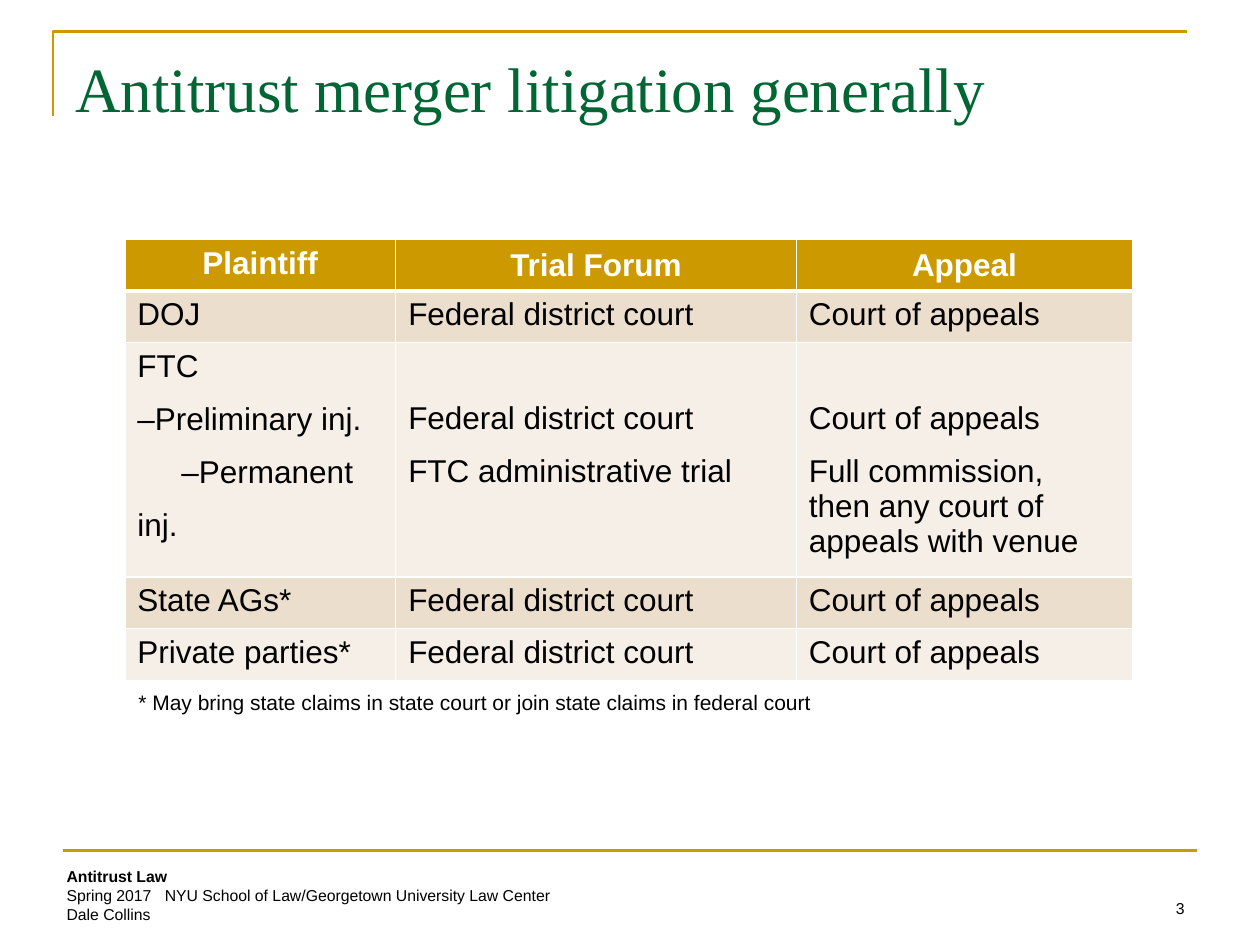
"""Build the slide on antitrust merger litigation forums."""
from lxml import etree
from pptx import Presentation
from pptx.dml.color import RGBColor
from pptx.enum.shapes import MSO_CONNECTOR
from pptx.enum.text import MSO_ANCHOR, PP_ALIGN
from pptx.oxml.ns import qn
from pptx.util import Inches, Pt

GOLD = RGBColor(0xCC, 0x99, 0x00)
GREEN = RGBColor(0x00, 0x66, 0x33)
BLACK = RGBColor(0x00, 0x00, 0x00)
WHITE = RGBColor(0xFF, 0xFF, 0xFF)
TAN = RGBColor(0xEC, 0xDE, 0xCC)
CREAM = RGBColor(0xF6, 0xEF, 0xE7)
STRAIGHT = MSO_CONNECTOR.STRAIGHT
TOP, MIDDLE, BOTTOM = MSO_ANCHOR.TOP, MSO_ANCHOR.MIDDLE, MSO_ANCHOR.BOTTOM
LEFT, CENTER, RIGHT = PP_ALIGN.LEFT, PP_ALIGN.CENTER, PP_ALIGN.RIGHT


def write(frame, lines, size, color=BLACK, font="Arial", bold=False, align=LEFT):
    frame.word_wrap = True
    for index, line in enumerate(lines):
        paragraph = frame.paragraphs[0] if index == 0 else frame.add_paragraph()
        paragraph.alignment = align
        run = paragraph.add_run()
        run.text = line
        run.font.size = Pt(size)
        run.font.name = font
        run.font.bold = bold
        run.font.color.rgb = color


def add_text(box, lines, size, anchor=TOP, **style):
    frame = slide.shapes.add_textbox(*map(Inches, box)).text_frame
    frame.vertical_anchor = anchor
    write(frame, lines, size, **style)
    return frame


prs = Presentation()
prs.slide_width = Inches(10)
prs.slide_height = Inches(7.5)
slide = prs.slides.add_slide(prs.slide_layouts[6])

builder = slide.shapes.build_freeform(Inches(0.42), Inches(0.92))
builder.add_line_segments(
    [(Inches(0.42), Inches(0.25)), (Inches(9.42), Inches(0.25))], close=False
)
title_rule = builder.convert_to_shape()
title_rule.fill.background()
title_rule.shadow.inherit = False

footer_rule = slide.shapes.add_connector(
    STRAIGHT, Inches(0.5), Inches(6.75), Inches(9.5), Inches(6.75)
)
etree.SubElement(footer_rule._element.spPr, qn("a:effectLst"))
for rule in (title_rule, footer_rule):
    rule.line.color.rgb = GOLD
    rule.line.width = Pt(1.5)

course = add_text(
    (0.43, 6.83, 4.67, 0.56),
    [
        "Antitrust Law",
        "Spring 2017\tNYU School of Law/Georgetown University Law Center",
        "Dale Collins",
    ],
    9,
)
course.paragraphs[0].runs[0].font.bold = True
tabs = etree.SubElement(course.paragraphs[1]._p.get_or_add_pPr(), qn("a:tabLst"))
etree.SubElement(tabs, qn("a:tab"), pos=str(Inches(0.78)), algn="l")

add_text((0.5, 0.3, 9, 0.78), ["Antitrust merger litigation generally"], 36,
         anchor=MIDDLE, color=GREEN, font="Times New Roman")
add_text((7.17, 6.83, 2.33, 0.5), ["3"], 9, anchor=BOTTOM, align=RIGHT)

DISTRICT = "Federal district court"
APPEALS = "Court of appeals"
forums = [
    [["Plaintiff"], ["Trial Forum"], ["Appeal"]],
    [["DOJ"], [DISTRICT], [APPEALS]],
    [
        ["FTC", "–Preliminary inj.", "–Permanent inj."],
        [DISTRICT, "FTC administrative trial"],
        [APPEALS, "Full commission,", "then any court of appeals with venue"],
    ],
    [["State AGs*"], [DISTRICT], [APPEALS]],
    [["Private parties*"], [DISTRICT], [APPEALS]],
]
column_widths = [2.15, 3.18, 2.67]
row_heights = [0.41, 0.41, 1.77, 0.41, 0.41]
FTC_ROW = 2

table = slide.shapes.add_table(
    len(forums), len(column_widths), Inches(0.99), Inches(1.9),
    Inches(sum(column_widths)), Inches(sum(row_heights)),
).table
for column, width in zip(table.columns, column_widths):
    column.width = Inches(width)
for row, height in zip(table.rows, row_heights):
    row.height = Inches(height)

for r, row in enumerate(forums):
    header = r == 0
    for c, lines in enumerate(row):
        cell = table.cell(r, c)
        cell.fill.solid()
        cell.fill.fore_color.rgb = GOLD if header else TAN if r % 2 else CREAM
        cell.vertical_anchor = MIDDLE if header and c else TOP
        write(cell.text_frame, lines, 18, color=WHITE if header else BLACK,
              bold=header, align=CENTER if header else LEFT)
        heavy_side = {0: "lnB", 1: "lnT"}.get(r)
        for position, side in enumerate(("lnL", "lnR", "lnT", "lnB")):
            border = etree.Element(qn(f"a:{side}"), w=str(Pt(3 if side == heavy_side else 1)))
            fill = etree.SubElement(border, qn("a:solidFill"))
            etree.SubElement(fill, qn("a:srgbClr"), val=str(WHITE))
            cell._tc.get_or_add_tcPr().insert(position, border)

for c in range(len(column_widths)):
    cell = table.cell(FTC_ROW, c)
    for paragraph in cell.text_frame.paragraphs[1:3 if c == 0 else 2]:
        paragraph.line_spacing = 1.5
    if c:
        cell.margin_top = Inches(0.46)
permanent = table.cell(FTC_ROW, 0).text_frame.paragraphs[2]
permanent._p.get_or_add_pPr().set("indent", str(Inches(0.35)))

add_text((1, 5.42, 5.61, 0.3),
         ["* May bring state claims in state court or join state claims in federal court"], 12)

prs.save("out.pptx")
